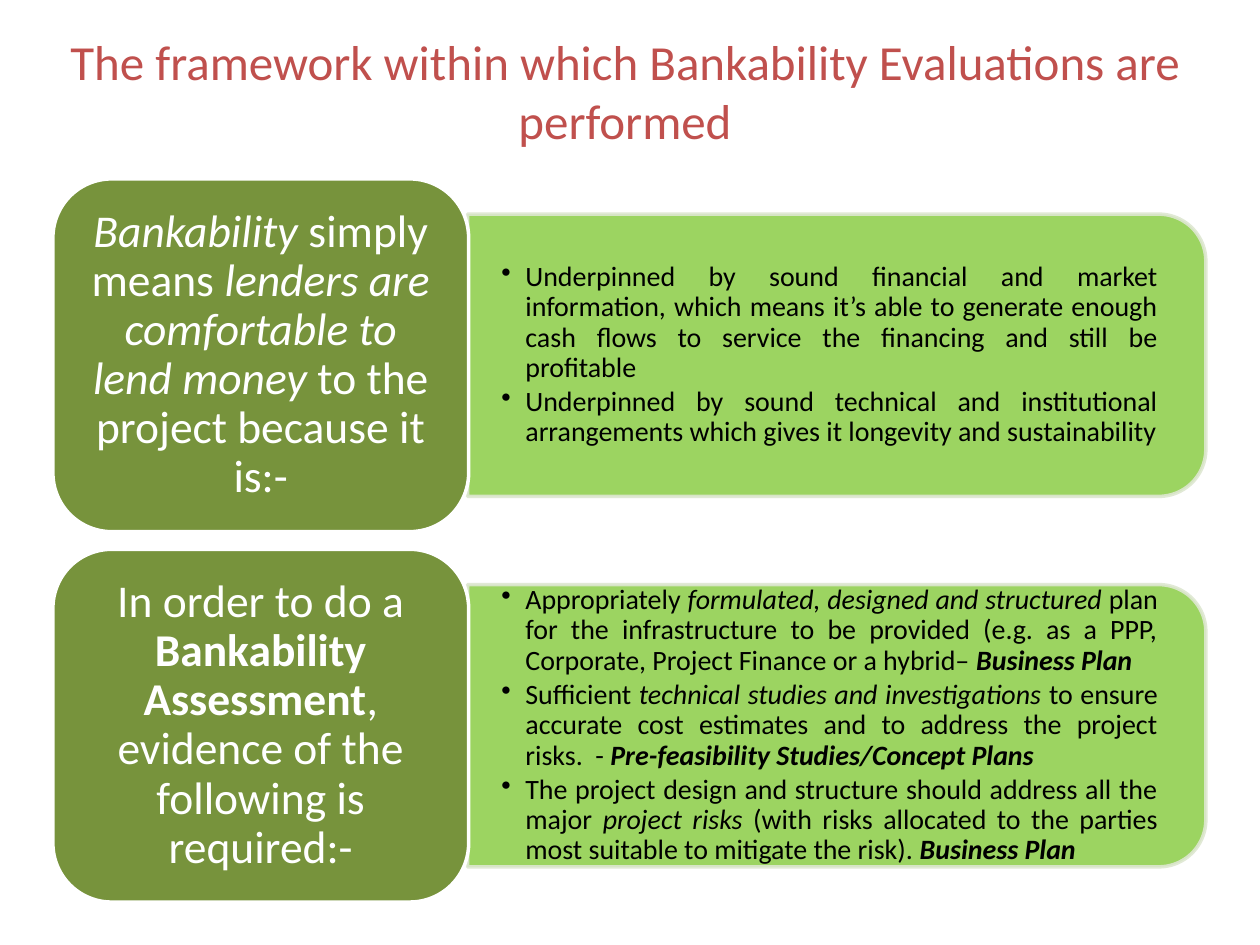
from typing import NamedTuple

from lxml.etree import SubElement
from pptx import Presentation
from pptx.dml.color import RGBColor
from pptx.enum.shapes import MSO_SHAPE as Shape
from pptx.enum.text import MSO_ANCHOR as Anchor, PP_ALIGN as Align
from pptx.oxml.ns import qn
from pptx.util import Inches, Pt

OLIVE = RGBColor(0x77, 0x93, 0x3C)
LIME = RGBColor(0x92, 0xD0, 0x50)
PALE = RGBColor(0xDE, 0xE7, 0xD1)
RED = RGBColor(0xC0, 0x50, 0x4D)
WHITE = RGBColor(0xFF, 0xFF, 0xFF)
BLACK = RGBColor(0, 0, 0)

LABEL_LEFT, LABEL_WIDTH, LABEL_HEIGHT = 0.42, 3.3, 2.8
PANEL_LEFT, PANEL_WIDTH, PANEL_HEIGHT = 3.71, 5.86, 2.24
FIRST_TOP, ROW_PITCH = 1.42, 2.94
BULLET_INDENT = Inches(0.19)


class Span(NamedTuple):
    text: str
    bold: bool = False
    italic: bool = False


class Row(NamedTuple):
    label: list[Span]
    points: list[list[Span]]


ROWS = [
    Row(
        [
            Span("Bankability", italic=True),
            Span(" simply means "),
            Span("lenders are comfortable to lend money ", italic=True),
            Span("to the project because it is:-"),
        ],
        [
            [Span("Underpinned by sound financial and market information, which means "
                  "it’s able to generate enough cash flows to service the financing "
                  "and still be profitable")],
            [Span("Underpinned by sound technical and institutional arrangements "
                  "which gives it longevity and sustainability")],
        ],
    ),
    Row(
        [
            Span("In order to do a "),
            Span("Bankability Assessment", bold=True),
            Span(", evidence of the following is required:-"),
        ],
        [
            [
                Span("Appropriately "),
                Span("formulated, designed and structured ", italic=True),
                Span("plan for the infrastructure to be provided (e.g. as a PPP, "
                     "Corporate, Project Finance or a hybrid– "),
                Span("Business Plan", bold=True, italic=True),
            ],
            [
                Span("Sufficient "),
                Span("technical studies and investigations ", italic=True),
                Span("to ensure accurate cost estimates and to address the project risks.  - "),
                Span("Pre-feasibility Studies/Concept Plans", bold=True, italic=True),
            ],
            [
                Span("The project design and structure should address all the major "),
                Span("project risks ", italic=True),
                Span("(with risks allocated to the parties most suitable to mitigate the risk). "),
                Span("Business Plan", bold=True, italic=True),
            ],
        ],
    ),
]


def add_bullet(paragraph) -> None:
    properties = paragraph._p.get_or_add_pPr()
    properties.set("marL", str(BULLET_INDENT))
    properties.set("indent", str(-BULLET_INDENT))
    SubElement(properties, qn("a:buChar"), char="•")


def write_text(shape, paragraphs: list[list[Span]], *, size: float, color: RGBColor,
               align=Align.CENTER, anchor=Anchor.MIDDLE, inset_x: float = 0,
               inset_y: float = 0, line_spacing: float = 1, space_after: float = 0,
               bulleted: bool = False) -> None:
    frame = shape.text_frame
    frame.word_wrap = True
    frame.vertical_anchor = anchor
    frame.margin_left = frame.margin_right = Inches(inset_x)
    frame.margin_top = frame.margin_bottom = Inches(inset_y)
    for index, spans in enumerate(paragraphs):
        paragraph = frame.add_paragraph() if index else frame.paragraphs[0]
        paragraph.alignment = align
        paragraph.line_spacing = line_spacing
        paragraph.space_after = Pt(space_after)
        if bulleted:
            add_bullet(paragraph)
        for span in spans:
            run = paragraph.add_run()
            run.text = span.text
            run.font.name = "Calibri"
            run.font.size = Pt(size)
            run.font.color.rgb = color
            run.font.bold = span.bold
            run.font.italic = span.italic


def add_box(slide, kind, left: float, top: float, width: float, height: float,
            fill: RGBColor, line: RGBColor):
    shape = slide.shapes.add_shape(kind, Inches(left), Inches(top),
                                   Inches(width), Inches(height))
    shape.shadow.inherit = False
    shape.fill.solid()
    shape.fill.fore_color.rgb = fill
    shape.line.color.rgb = line
    shape.line.width = Pt(2)
    return shape


def set_opacity(shape, percent: int) -> None:
    for color in shape._element.spPr.iter(qn("a:srgbClr")):
        SubElement(color, qn("a:alpha"), val=str(percent * 1000))


def add_text_box(slide, left: float, top: float, width: float, height: float):
    return slide.shapes.add_textbox(Inches(left), Inches(top), Inches(width), Inches(height))


def draw_row(slide, row: Row, top: float) -> None:
    middle = top + LABEL_HEIGHT / 2
    panel = add_box(slide, Shape.ROUND_2_SAME_RECTANGLE,
                    PANEL_LEFT + (PANEL_WIDTH - PANEL_HEIGHT) / 2, middle - PANEL_WIDTH / 2,
                    PANEL_HEIGHT, PANEL_WIDTH, LIME, PALE)
    panel.rotation = 90
    set_opacity(panel, 90)
    points = add_text_box(slide, PANEL_LEFT, middle - 1.01, 5.75, 2.02)
    write_text(points, row.points, size=16, color=BLACK, align=Align.JUSTIFY,
               inset_x=0.27, inset_y=0.14, line_spacing=0.9, space_after=2.4, bulleted=True)
    label = add_box(slide, Shape.ROUNDED_RECTANGLE, LABEL_LEFT, top,
                    LABEL_WIDTH, LABEL_HEIGHT, OLIVE, WHITE)
    write_text(label, [row.label], size=26, color=WHITE,
               inset_x=0.11, inset_y=0.05, line_spacing=0.9)


def main() -> None:
    presentation = Presentation()
    presentation.slide_width = Inches(10)
    presentation.slide_height = Inches(7.5)
    slide = presentation.slides.add_slide(presentation.slide_layouts[6])
    for index, row in enumerate(ROWS):
        draw_row(slide, row, FIRST_TOP + index * ROW_PITCH)
    title = add_text_box(slide, 0.17, 0.25, 9.58, 1.17)
    write_text(title, [[Span("The framework within which Bankability Evaluations are performed")]],
               size=28, color=RED, anchor=Anchor.TOP)
    presentation.save("out.pptx")


if __name__ == "__main__":
    main()
